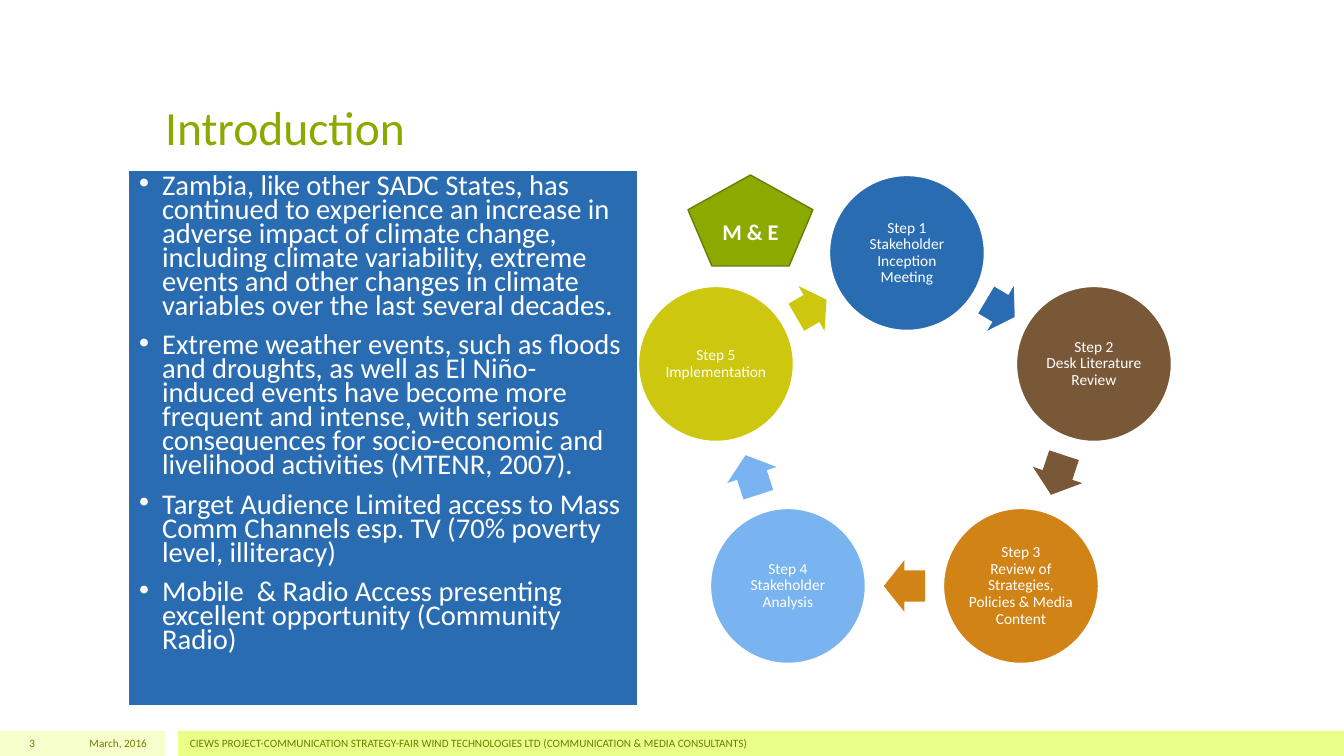
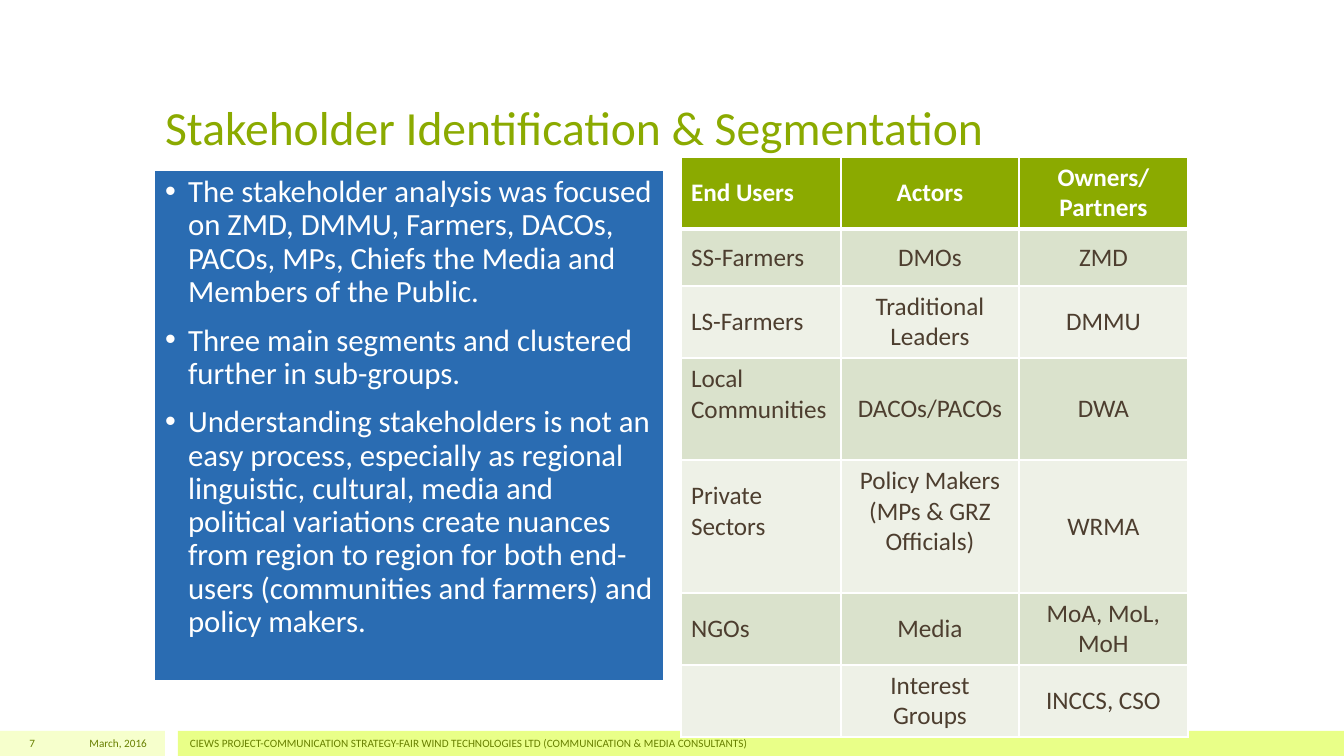
from itertools import chain
from math import atan2, degrees, hypot

from lxml.etree import SubElement
from pptx import Presentation
from pptx.dml.color import RGBColor
from pptx.enum.shapes import MSO_SHAPE
from pptx.enum.text import MSO_ANCHOR, MSO_AUTO_SIZE, PP_ALIGN
from pptx.oxml.ns import qn
from pptx.util import Pt

EMU_PER_PX = 12192000 / 1344

COLORS = {
    "green": "8BAA00",
    "dark_green": "677E00",
    "footer_text": "688000",
    "band_pale": "F6FFCC",
    "band_lime": "E9FF88",
    "blue": "2A6CB2",
    "brown": "795837",
    "orange": "D18316",
    "sky": "79B4F0",
    "yellow": "CDC80F",
    "white": "FFFFFF",
    "table_text": "4D3E2F",
    "row_dark": "DAE2CC",
    "row_light": "EEF1E7",
}

LEFT, CENTER, RIGHT = PP_ALIGN.LEFT, PP_ALIGN.CENTER, PP_ALIGN.RIGHT

FORMATS = {
    "title": {"color": "green", "font": {"size": Pt(34)}, "paragraph": {"alignment": LEFT}},
    "body": {"color": "white", "font": {},
             "paragraph": {"alignment": LEFT, "space_before": Pt(11)}},
    "step": {"color": "white", "font": {"size": Pt(11)},
             "paragraph": {"alignment": CENTER, "line_spacing": 0.9}},
    "badge": {"color": "white", "font": {"size": Pt(16), "bold": True},
              "paragraph": {"alignment": CENTER}},
    "footer": {"color": "footer_text", "font": {"size": Pt(8)}, "paragraph": {}},
    "header": {"color": "white", "font": {"size": Pt(18), "bold": True}, "paragraph": {}},
    "cell": {"color": "table_text", "font": {"size": Pt(18), "bold": False}, "paragraph": {}},
}

FOOTER = ("CIEWS PROJECT-COMMUNICATION STRATEGY-FAIR WIND TECHNOLOGIES LTD "
          "(COMMUNICATION & MEDIA CONSULTANTS)")

INTRODUCTION = [
    "Zambia, like other SADC States, has continued to experience an increase in adverse impact "
    "of climate change, including climate variability, extreme events and other changes in "
    "climate variables over the last several decades.",
    "Extreme weather events, such as floods and droughts, as well as El Niño-induced events have "
    "become more frequent and intense, with serious consequences for socio-economic and "
    "livelihood activities (MTENR, 2007).",
    "Target Audience Limited access to Mass Comm Channels esp. TV (70% poverty level, illiteracy)",
    "Mobile  & Radio Access presenting excellent opportunity (Community Radio)",
]

SEGMENTATION = [
    "The stakeholder analysis was focused on ZMD, DMMU, Farmers, DACOs, PACOs, MPs, Chiefs the "
    "Media and Members of the Public.",
    "Three main segments and clustered further in sub-groups.",
    "Understanding stakeholders is not an easy process, especially as regional linguistic, "
    "cultural, media and political variations create nuances from region to region for both "
    "end-users (communities and farmers) and policy makers.",
]

STEPS = [
    ("Step 1\nStakeholder Inception Meeting", 907, 253, "blue"),
    ("Step 2\nDesk Literature Review", 1094, 364, "brown"),
    ("Step 3\nReview of Strategies, Policies & Media Content", 1021, 586, "orange"),
    ("Step 4\nStakeholder Analysis", 788, 586, "sky"),
    ("Step 5\nImplementation", 716, 364, "yellow"),
]

STAKEHOLDERS = [
    ("End Users", "Actors", "Owners/\nPartners"),
    ("SS-Farmers", "DMOs", "ZMD"),
    ("LS-Farmers", "Traditional Leaders", "DMMU"),
    ("Local Communities", "DACOs/PACOs", "DWA"),
    ("Private Sectors", "Policy Makers (MPs & GRZ Officials)", "WRMA"),
    ("NGOs", "Media", "MoA, MoL, MoH"),
    ("", "Interest Groups", "INCCS, CSO"),
]
COLUMN_WIDTHS = [160, 178, 169]
ROW_HEIGHTS = [72, 57, 72, 102, 133, 72, 72]
RAISED_CELLS = {(3, 0), (4, 0), (4, 1)}


def px(length):
    """Turn pixels into EMU."""
    return round(length * EMU_PER_PX)


def rgb(name):
    """Look up a named colour."""
    return RGBColor.from_string(COLORS[name])


def assign(target, values):
    """Set each attribute named in a dict."""
    for name, value in values.items():
        setattr(target, name, value)


def place(shape, box):
    """Move a shape to a box of left, top, width and height."""
    assign(shape, dict(zip(("left", "top", "width", "height"), map(px, box))))


class Deck:
    """Hold the shared style and the current slide."""

    def __init__(self):
        """Start a widescreen presentation."""
        self.presentation = Presentation()
        assign(self.presentation, {"slide_width": px(1344), "slide_height": px(756)})
        self.slide = None

    def set_text(self, frame, text, style, anchor=MSO_ANCHOR.MIDDLE, font=None, paragraph=None):
        """Fill a text frame and format its paragraphs."""
        look = FORMATS[style]
        frame.text = text
        assign(frame, {"word_wrap": True, "vertical_anchor": anchor})
        for item in frame.paragraphs:
            assign(item, look["paragraph"] | (paragraph or {}))
            for run in item.runs:
                assign(run.font, {"name": "Calibri"} | look["font"] | (font or {}))
                run.font.color.rgb = rgb(look["color"])

    def add_slide(self, title, number):
        """Add a slide with its title, bands and footer."""
        self.slide = self.presentation.slides.add_slide(self.presentation.slide_layouts[1])
        heading = self.slide.shapes.title
        place(heading, (155, 30, 1033, 130))
        self.set_text(heading.text_frame, title, "title", MSO_ANCHOR.BOTTOM)
        heading.text_frame.auto_size = MSO_AUTO_SIZE.NONE
        self.shape(MSO_SHAPE.RECTANGLE, (0, 731, 165, 25), "band_pale")
        self.shape(MSO_SHAPE.RECTANGLE, (178, 731, 1166, 25), "band_lime")
        self.label(number, (0, 731, 45, 25), RIGHT)
        self.label("March, 2016", (47, 731, 110, 25), RIGHT)
        self.label(FOOTER, (180, 731, 1008, 25), LEFT)

    def label(self, text, box, alignment):
        """Add a footer text."""
        textbox = self.slide.shapes.add_textbox(*map(px, box))
        self.set_text(textbox.text_frame, text, "footer", paragraph={"alignment": alignment})

    def shape(self, kind, box, fill, line=None):
        """Add a flat preset shape."""
        shape = self.slide.shapes.add_shape(kind, *map(px, box))
        shape.shadow.inherit = False
        shape.fill.solid()
        shape.fill.fore_color.rgb = rgb(fill)
        if line:
            shape.line.color.rgb = rgb(line)
            shape.line.width = Pt(1)
        else:
            shape.line.fill.background()
        return shape

    def bullets(self, items, box, size, spacing):
        """Fill the body placeholder with a list on blue."""
        body = self.slide.placeholders[1]
        place(body, box)
        body.fill.solid()
        body.fill.fore_color.rgb = rgb("blue")
        self.set_text(body.text_frame, "\n".join(items), "body", MSO_ANCHOR.TOP,
                      {"size": Pt(size)}, {"line_spacing": spacing})
        body.text_frame.auto_size = MSO_AUTO_SIZE.NONE
        for paragraph in body.text_frame.paragraphs:
            properties = paragraph._p.get_or_add_pPr()
            properties.set("marL", str(px(23)))
            properties.set("indent", str(px(-23)))

    def cycle(self, steps, diameter):
        """Add circles joined in a ring by arrows."""
        for step, following in zip(steps, steps[1:] + steps[:1]):
            text, x, y, color = step
            box = (x - diameter / 2, y - diameter / 2, diameter, diameter)
            circle = self.shape(MSO_SHAPE.OVAL, box, color, "white")
            sides = ("margin_left", "margin_top", "margin_right", "margin_bottom")
            assign(circle.text_frame, dict.fromkeys(sides, px(2)))
            self.set_text(circle.text_frame, text, "step")
            self.arrow((x, y), following[1:3], diameter, color)

    def arrow(self, start, end, diameter, color):
        """Add a block arrow midway between two circles."""
        across, down = end[0] - start[0], end[1] - start[1]
        width, height = 0.53 * (hypot(across, down) - diameter), 52
        left = (start[0] + end[0] - width) / 2
        top = (start[1] + end[1] - height) / 2
        arrow = self.shape(MSO_SHAPE.RIGHT_ARROW, (left, top, width, height), color)
        arrow.adjustments[0] = 0.6
        arrow.rotation = degrees(atan2(down, across)) % 360

    def badge(self, text, box):
        """Add a pentagon with a bold caption."""
        pentagon = self.shape(MSO_SHAPE.REGULAR_PENTAGON, box, "green", "dark_green")
        self.set_text(pentagon.text_frame, text, "badge")

    def border(self, cell, bottom):
        """Draw white lines around a cell."""
        properties = cell._tc.get_or_add_tcPr()
        for side, width in {"L": 1, "R": 1, "T": 1, "B": bottom}.items():
            line = SubElement(properties, qn(f"a:ln{side}"), w=str(int(Pt(width))))
            fill = SubElement(line, qn("a:solidFill"))
            SubElement(fill, qn("a:srgbClr"), val=COLORS["white"])

    def table(self, rows, left, top):
        """Add the banded table."""
        size = (sum(COLUMN_WIDTHS), sum(ROW_HEIGHTS))
        frame = self.slide.shapes.add_table(len(rows), len(rows[0]), *map(px, (left, top, *size)))
        table = frame.table
        for column, width in zip(table.columns, COLUMN_WIDTHS):
            column.width = px(width)
        for row, height in zip(table.rows, ROW_HEIGHTS):
            row.height = px(height)
        for index, (cell, text) in enumerate(zip(table.iter_cells(), chain.from_iterable(rows))):
            row, column = divmod(index, len(rows[0]))
            self.border(cell, 1 if row else 3)
            cell.fill.solid()
            band = "row_dark" if row % 2 else "row_light"
            cell.fill.fore_color.rgb = rgb(band if row else "green")
            self.set_text(cell.text_frame, text, "cell" if row else "header",
                          paragraph={"alignment": CENTER if column else LEFT})
            cell.vertical_anchor = MSO_ANCHOR.MIDDLE
            if (row, column) in RAISED_CELLS:
                cell.margin_bottom = px(35)


def main():
    """Build and save both slides."""
    deck = Deck()
    deck.add_slide("Introduction", "3")
    deck.bullets(INTRODUCTION, (129, 171, 508, 534), 20.4, 0.7)
    deck.cycle(STEPS, 155)
    deck.badge("M & E", (688, 175, 125, 91))

    deck.add_slide("Stakeholder Identification & Segmentation", "7")
    deck.bullets(SEGMENTATION, (155, 171, 508, 509), 22, 0.9)
    deck.table(STAKEHOLDERS, 681, 157)
    deck.presentation.save("out.pptx")


if __name__ == "__main__":
    main()
